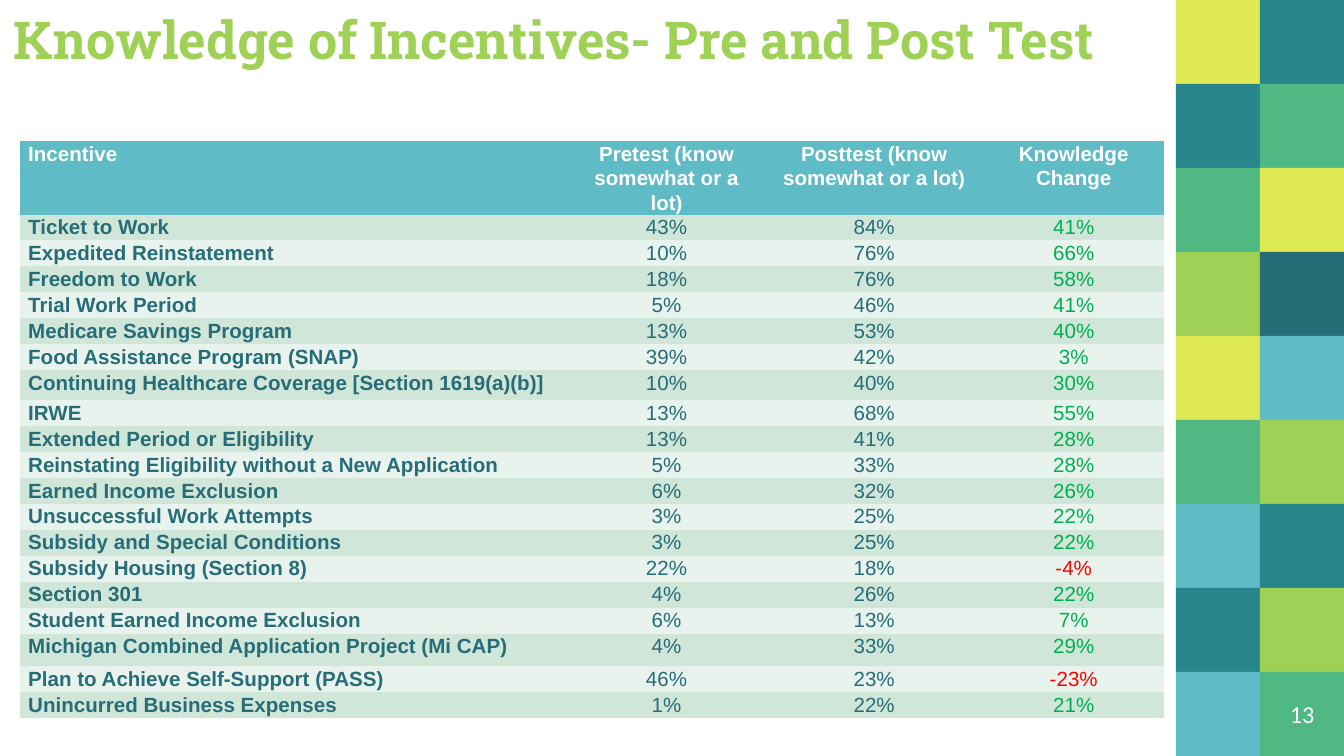
import pptx
import pptx.dml.color
import pptx.enum.shapes
import pptx.enum.text
import pptx.util
from dataclasses import dataclass

Inches = pptx.util.Inches
ALIGN = pptx.enum.text.PP_ALIGN
ANCHOR = pptx.enum.text.MSO_ANCHOR
PLAIN_TABLE_STYLE = "{2D5ABB26-0587-4C30-8999-92F81FD0307C}"  # no style, no grid


@dataclass(frozen=True)
class Theme:
    lime: str = "9ED155"
    yellow: str = "DFE954"
    green: str = "50B883"
    teal: str = "27868B"
    sky: str = "5FBBC5"
    deep: str = "266D78"
    white: str = "FFFFFF"
    band_dark: str = "D0E6D9"
    band_light: str = "E9F3ED"
    gain: str = "00B050"
    loss: str = "FF0000"
    title_font: str = "Roboto Slab"
    table_font: str = "Arial"
    number_font: str = "Calibri"
    title_size: int = 28
    table_size: int = 11
    number_size: int = 13


theme = Theme()


def paint(fill, color):
    fill.solid()
    fill.fore_color.rgb = pptx.dml.color.RGBColor.from_string(color)


def write(paragraph, text, font, size, color, bold=False, align=ALIGN.LEFT):
    paragraph.alignment = align
    run = paragraph.add_run()
    run.text = text
    run.font.name = font
    run.font.size = pptx.util.Pt(size)
    run.font.bold = bold
    run.font.color.rgb = pptx.dml.color.RGBColor.from_string(color)


# Widescreen slide, 16:9
deck = pptx.Presentation()
deck.slide_width, deck.slide_height = Inches(10), Inches(10 * 9 / 16)
slide = deck.slides.add_slide(deck.slide_layouts[5])

# Mosaic of square tiles down the right edge, top to bottom
mosaic = [
    (theme.yellow, theme.teal),
    (theme.teal, theme.green),
    (theme.green, theme.yellow),
    (theme.lime, theme.deep),
    (theme.yellow, theme.sky),
    (theme.green, theme.lime),
    (theme.sky, theme.teal),
    (theme.teal, theme.lime),
    (theme.sky, theme.green),
]
tile_side = deck.slide_height // len(mosaic)
for row, colors in enumerate(mosaic):
    for column, color in enumerate(colors):
        tile = slide.shapes.add_shape(
            pptx.enum.shapes.MSO_SHAPE.RECTANGLE,
            deck.slide_width - (2 - column) * tile_side, row * tile_side,
            tile_side, tile_side)
        tile.shadow.inherit = False
        paint(tile.fill, color)
        tile.line.fill.background()

# Title
title = slide.shapes.title
title.left, title.top = Inches(0), Inches(0.01)
title.width, title.height = Inches(8.71), Inches(0.61)

# Slide number on the last tile
number = slide.shapes.add_textbox(
    deck.slide_width - tile_side, deck.slide_height - tile_side, tile_side, tile_side)

for box, anchor in ((title, ANCHOR.BOTTOM), (number, ANCHOR.MIDDLE)):
    frame = box.text_frame
    frame.word_wrap = True
    frame.auto_size = pptx.enum.text.MSO_AUTO_SIZE.NONE
    frame.vertical_anchor = anchor
    frame.margin_left = frame.margin_right = Inches(0.1)
    frame.margin_top = frame.margin_bottom = Inches(0.1)

write(title.text_frame.paragraphs[0], "Knowledge of Incentives- Pre and Post Test",
      theme.title_font, theme.title_size, theme.lime, bold=True)
write(number.text_frame.paragraphs[0], "13",
      theme.number_font, theme.number_size, theme.white, align=ALIGN.CENTER)

# Incentive, pretest and posttest percentages; the change is their difference
headings = ["Incentive", "Pretest (know somewhat or a lot)",
            "Posttest (know somewhat or a lot)", "Knowledge Change"]
results = [
    ("Ticket to Work", 43, 84),
    ("Expedited Reinstatement", 10, 76),
    ("Freedom to Work", 18, 76),
    ("Trial Work Period", 5, 46),
    ("Medicare Savings Program", 13, 53),
    ("Food Assistance Program (SNAP)", 39, 42),
    ("Continuing Healthcare Coverage [Section 1619(a)(b)]", 10, 40),
    ("IRWE", 13, 68),
    ("Extended Period or Eligibility", 13, 41),
    ("Reinstating Eligibility without a New Application", 5, 33),
    ("Earned Income Exclusion", 6, 32),
    ("Unsuccessful Work Attempts", 3, 25),
    ("Subsidy and Special Conditions", 3, 25),
    ("Subsidy Housing (Section 8)", 22, 18),
    ("Section 301", 4, 26),
    ("Student Earned Income Exclusion", 6, 13),
    ("Michigan Combined Application Project (Mi CAP)", 4, 33),
    ("Plan to Achieve Self-Support (PASS)", 46, 23),
    ("Unincurred Business Expenses", 1, 22),
]
rows = [headings]
for incentive, pretest, posttest in results:
    rows.append([incentive, f"{pretest}%", f"{posttest}%", f"{posttest - pretest}%"])

# Results table: a few taller rows, the rest share the remaining height
table_height = Inches(4.2)
table_frame = slide.shapes.add_table(
    len(rows), len(headings), Inches(0.15), Inches(1.05), Inches(8.5), table_height)
table_frame.element.xpath(".//a:tableStyleId")[0].text = PLAIN_TABLE_STYLE
knowledge = table_frame.table
for column, width in zip(knowledge.columns, (4.08, 1.46, 1.63, 1.34)):
    column.width = Inches(width)
tall_rows = {0: Inches(0.45), 7: Inches(0.22), 17: Inches(0.24)}
regular_height = (table_height - sum(tall_rows.values())) // (len(rows) - len(tall_rows))

for r, values in enumerate(rows):
    knowledge.rows[r].height = tall_rows.get(r, regular_height)
    band = theme.sky if r == 0 else theme.band_dark if r % 2 else theme.band_light
    for c, value in enumerate(values):
        cell = knowledge.cell(r, c)
        paint(cell.fill, band)
        cell.margin_left = cell.margin_right = Inches(0.06)
        cell.margin_top = cell.margin_bottom = 0
        if r == 0:
            color = theme.white
        elif c == 3:
            color = theme.loss if value.startswith("-") else theme.gain
        else:
            color = theme.deep
        paragraph = cell.text_frame.paragraphs[0]
        paragraph.line_spacing = 1.07
        write(paragraph, value, theme.table_font, theme.table_size, color,
              bold=r == 0 or c == 0, align=ALIGN.CENTER if c else ALIGN.LEFT)

deck.save("out.pptx")
